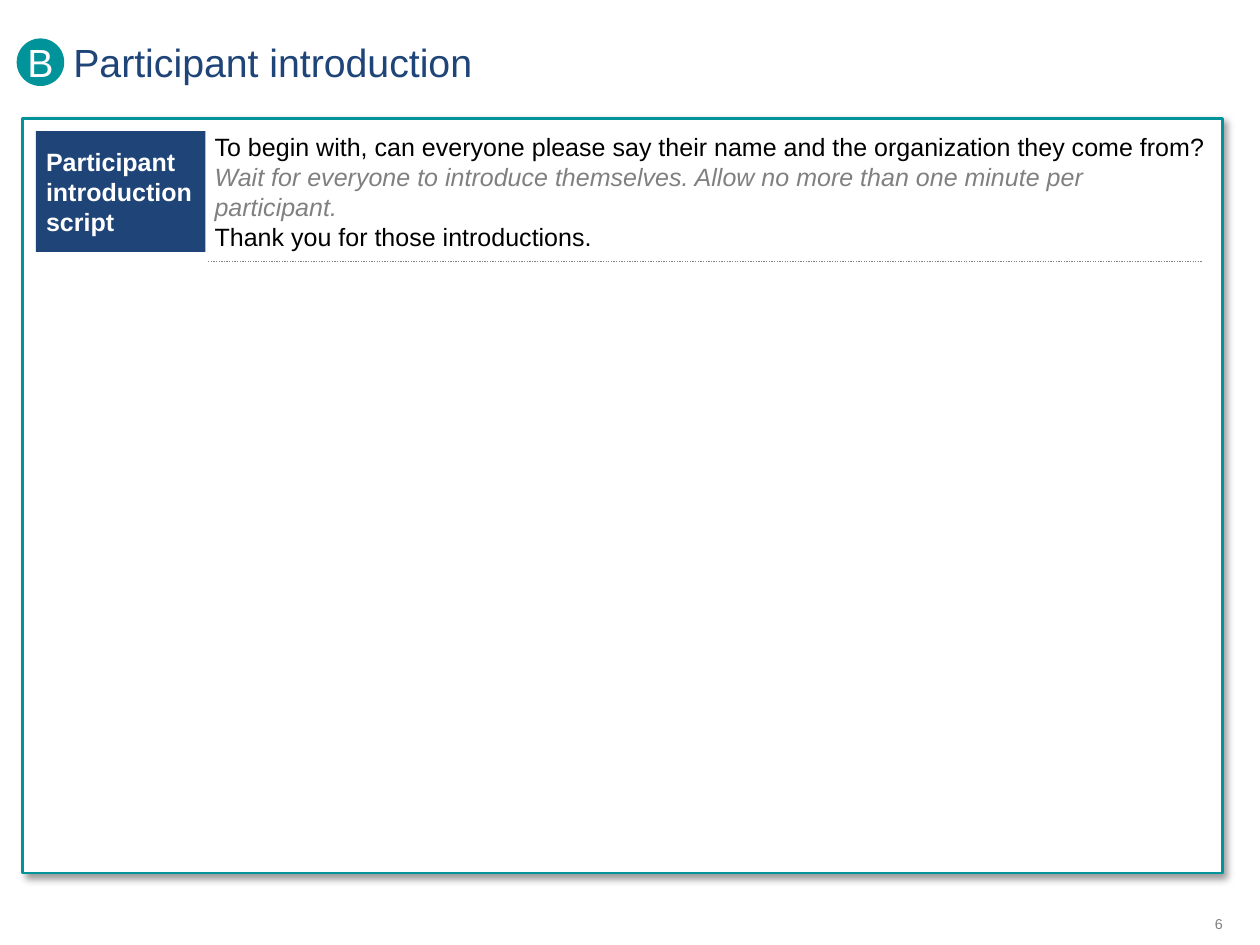
"""Build the participant introduction slide of a facilitator script."""
from lxml import etree
from pptx import Presentation
from pptx.dml import color
from pptx.enum import dml, shapes, text
from pptx.oxml import ns
from pptx.util import Cm, Pt

TEAL, NAVY, GREY, WHITE, BLACK = "00939A", "1F4478", "808080", "FFFFFF", "000000"
MIDDLE = text.MSO_ANCHOR.MIDDLE
CENTER, RIGHT = text.PP_ALIGN.CENTER, text.PP_ALIGN.RIGHT


def paint(target, hex_color):
    """Give a fill or font a solid colour."""
    if hasattr(target, "solid"):
        target.solid()
        target = target.fore_color
    else:
        target = target.color
    target.rgb = color.RGBColor.from_string(hex_color)


def apply(target, formats):
    """Set each format value on the target."""
    for name, value in formats.items():
        setattr(target, name, value)


def write(shape, paragraphs, size, align=None, inset=0, wrap=True, anchor=text.MSO_ANCHOR.TOP):
    """Fill a shape with paragraphs of (wording, colour, font formats) runs."""
    frame = shape.text_frame
    margins = {f"margin_{side}": Cm(inset) for side in ("left", "top", "right", "bottom")}
    apply(frame, {"word_wrap": wrap, "vertical_anchor": anchor, **margins})
    for index, runs in enumerate(paragraphs):
        paragraph = frame.paragraphs[0] if index == 0 else frame.add_paragraph()
        paragraph.alignment = align or text.PP_ALIGN.LEFT
        for wording, hex_color, formats in runs:
            run = paragraph.add_run()
            run.text = wording
            apply(run.font, {"name": "Arial", "size": Pt(size), **formats})
            paint(run.font, hex_color)


def add_text(slide, box, paragraphs, size, **layout):
    """Add a text box."""
    write(slide.shapes.add_textbox(*map(Cm, box)), paragraphs, size, **layout)


def add_block(slide, kind, box, fill):
    """Add a flat shape without outline."""
    block = slide.shapes.add_shape(kind, *map(Cm, box))
    block.shadow.inherit = False
    paint(block.fill, fill)
    block.line.fill.background()
    return block


def add_frame(slide, box):
    """Add the teal frame with its soft drop shadow."""
    frame = add_block(slide, shapes.MSO_SHAPE.RECTANGLE, box, WHITE)
    paint(frame.line.fill, TEAL)
    frame.line.width = Pt(1.5)
    effects = frame._element.spPr.find(ns.qn("a:effectLst"))
    shadow = etree.SubElement(effects, ns.qn("a:outerShdw"), blurRad=str(Pt(4)),
                              dist=str(Pt(3)), dir="2700000", algn="tl", rotWithShape="0")
    tint = etree.SubElement(shadow, ns.qn("a:srgbClr"), val=BLACK)
    etree.SubElement(tint, ns.qn("a:alpha"), val="40000")


def add_divider(slide, left, right, y):
    """Add a dotted horizontal line."""
    divider = slide.shapes.add_connector(shapes.MSO_CONNECTOR.STRAIGHT,
                                         Cm(left), Cm(y), Cm(right), Cm(y))
    paint(divider.line.fill, GREY)
    apply(divider.line, {"width": Pt(0.75), "dash_style": dml.MSO_LINE.ROUND_DOT})
    etree.SubElement(divider._element.spPr, ns.qn("a:effectLst"))


def main():
    """Build and save the slide."""
    deck = Presentation()
    apply(deck, {"slide_width": Cm(24.89), "slide_height": Cm(18.67)})
    slide = deck.slides.add_slide(deck.slide_layouts[6])

    add_text(slide, (23.8, 18.08, 0.36, 0.33), [[("6", GREY, {})]], 8,
             align=RIGHT, wrap=False, anchor=MIDDLE)
    add_frame(slide, (0.45, 2.34, 23.7, 14.91))
    add_text(slide, (1.45, 0.76, 22.83, 0.94),
             [[("Participant introduction", NAVY, {})]], 22)
    badge = add_block(slide, shapes.MSO_SHAPE.OVAL, (0.33, 0.76, 0.94, 0.94), TEAL)
    write(badge, [[("B", WHITE, {})]], 22, align=CENTER, wrap=False, anchor=MIDDLE)

    add_divider(slide, 4.11, 23.75, 5.16)
    script = [
        [("To begin with, can everyone please say their name and the organization "
          "they come from? ", BLACK, {}),
         ("Wait for everyone to introduce themselves. Allow no more than one minute "
          "per participant.", GREY, {"italic": True})],
        [("Thank you for those introductions.", BLACK, {})],
    ]
    add_text(slide, (4.24, 2.59, 19.66, 1.8), script, 14)
    label = add_block(slide, shapes.MSO_SHAPE.RECTANGLE, (0.71, 2.59, 3.35, 2.39), NAVY)
    write(label, [[("Participant introduction script", WHITE, {"bold": True})]], 14,
          inset=0.2, anchor=MIDDLE)

    deck.save("out.pptx")


if __name__ == "__main__":
    main()
